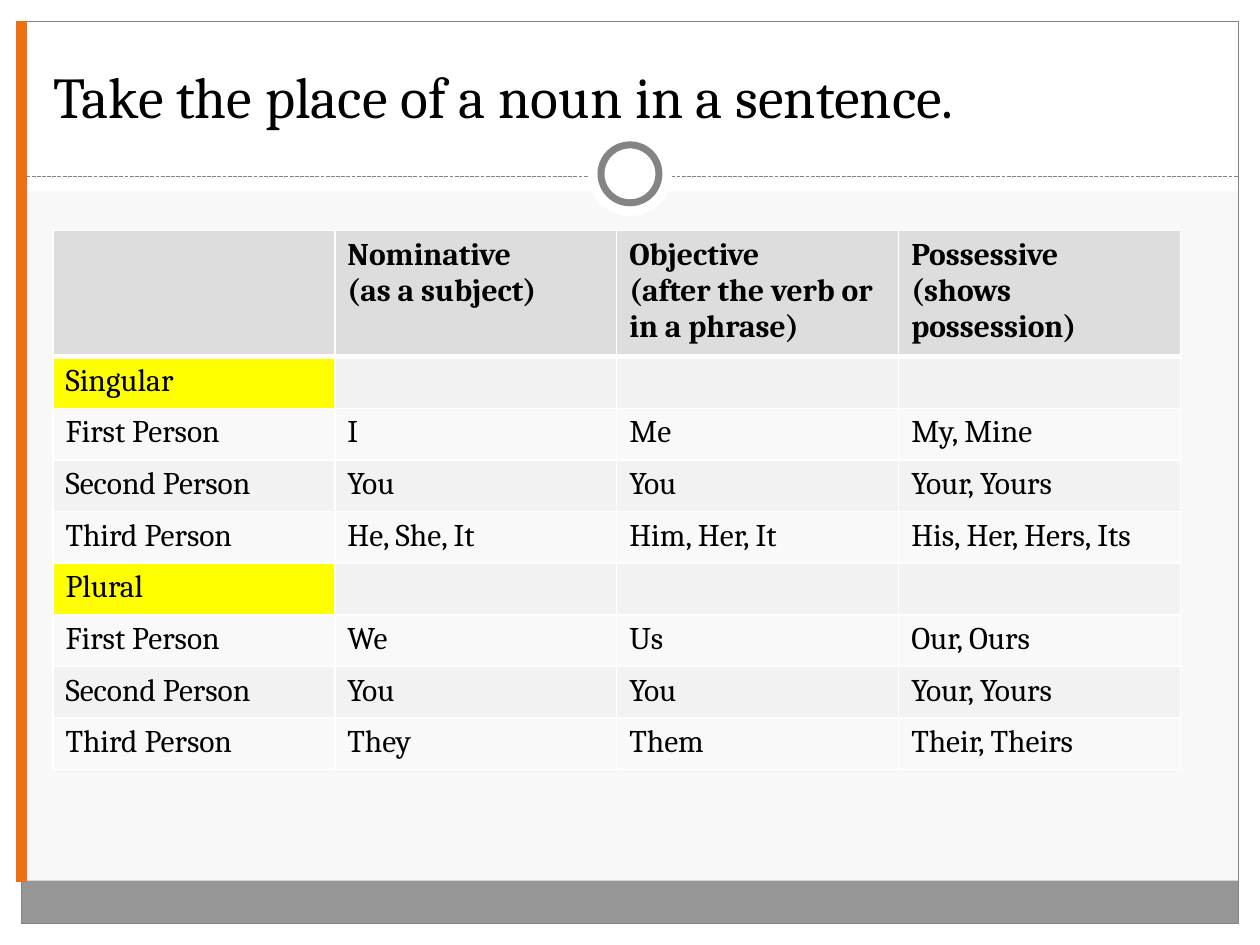
from lxml import etree
from pptx import Presentation
from pptx.dml.color import RGBColor
from pptx.enum.dml import MSO_LINE
from pptx.enum.shapes import MSO_CONNECTOR, MSO_SHAPE
from pptx.enum.text import MSO_ANCHOR
from pptx.oxml.ns import qn
from pptx.util import Inches, Pt

RECTANGLE, OVAL = MSO_SHAPE.RECTANGLE, MSO_SHAPE.OVAL
STRAIGHT = MSO_CONNECTOR.STRAIGHT
DASH = MSO_LINE.SQUARE_DOT
BOTTOM = MSO_ANCHOR.BOTTOM

FONT = "Cambria"
WHITE, BLACK, GRAY, ORANGE = "FFFFFF", "000000", "848484", "EE7012"
HEADER_FILL, GROUP_FILL, BAND_FILLS = "DDDDDD", "FFFF00", ("F9F9F9", "F2F2F2")

TITLE = "Take the place of a noun in a sentence."
PRONOUNS = [
    ("", "Nominative\n(as a subject)", "Objective\n(after the verb or in a phrase)",
     "Possessive\n(shows possession)"),
    ("Singular", "", "", ""),
    ("First Person", "I", "Me", "My, Mine"),
    ("Second Person", "You", "You", "Your, Yours"),
    ("Third Person", "He, She, It", "Him, Her, It", "His, Her, Hers, Its"),
    ("Plural", "", "", ""),
    ("First Person", "We", "Us", "Our, Ours"),
    ("Second Person", "You", "You", "Your, Yours"),
    ("Third Person", "They", "Them", "Their, Theirs"),
]

WIDTH, HEIGHT, MARGIN = 10, 7.5, 0.17
INNER_WIDTH, INNER_HEIGHT = WIDTH - 2 * MARGIN, HEIGHT - 2 * MARGIN
RULE_TOP, RING_CENTER = 1.4, 1.38
TABLE_LEFT, TABLE_TOP, TABLE_WIDTH = 0.42, 1.83, 8.95
HEADER_HEIGHT, ROW_HEIGHT = 0.95, 0.41


def color(value):
    return RGBColor.from_string(value)


def add_panel(page, kind, left, top, width, height, fill=None, line=None, weight=0.75):
    shape = page.shapes.add_shape(kind, *map(Inches, (left, top, width, height)))
    shape.shadow.inherit = False
    if fill:
        shape.fill.solid()
        shape.fill.fore_color.rgb = color(fill)
    else:
        shape.fill.background()
    if line:
        shape.line.color.rgb = color(line)
        shape.line.width = Pt(weight)
    else:
        shape.line.fill.background()


def add_disc(page, diameter, **style):
    add_panel(page, OVAL, (WIDTH - diameter) / 2, RING_CENTER - diameter / 2,
              diameter, diameter, WHITE, **style)


def add_rule(page, start, end, line, weight, dash=None):
    rule = page.shapes.add_connector(STRAIGHT, *map(Inches, start + end))
    rule.line.color.rgb = color(line)
    rule.line.width = Pt(weight)
    if dash:
        rule.line.dash_style = dash
    etree.SubElement(rule._element.spPr, qn("a:effectLst"))


def write(frame, text, size, bold=False):
    for index, content in enumerate(text.split("\n")):
        para = frame.add_paragraph() if index else frame.paragraphs[0]
        span = para.add_run()
        span.text = content
        span.font.name, span.font.size, span.font.bold = FONT, Pt(size), bold
        span.font.color.rgb = color(BLACK)


def set_borders(cell, bottom_weight):
    properties = cell._tc.get_or_add_tcPr()
    weights = {"a:lnL": 1, "a:lnR": 1, "a:lnT": 1, "a:lnB": bottom_weight}
    for position, (tag, weight) in enumerate(weights.items()):
        border = etree.Element(qn(tag), w=str(Pt(weight)))
        fill = etree.SubElement(border, qn("a:solidFill"))
        etree.SubElement(fill, qn("a:srgbClr"), val=WHITE)
        properties.insert(position, border)


def row_fill(row, column):
    if row == 0:
        return HEADER_FILL
    if column == 0 and not any(PRONOUNS[row][1:]):
        return GROUP_FILL
    return BAND_FILLS[row % 2]


def add_pronoun_table(page):
    rows, columns = len(PRONOUNS), len(PRONOUNS[0])
    height = HEADER_HEIGHT + (rows - 1) * ROW_HEIGHT
    table = page.shapes.add_table(
        rows, columns, *map(Inches, (TABLE_LEFT, TABLE_TOP, TABLE_WIDTH, height))).table
    for column in table.columns:
        column.width = Inches(TABLE_WIDTH / columns)
    for row, texts in enumerate(PRONOUNS):
        table.rows[row].height = Inches(ROW_HEIGHT if row else HEADER_HEIGHT)
        for column, text in enumerate(texts):
            cell = table.cell(row, column)
            cell.fill.solid()
            cell.fill.fore_color.rgb = color(row_fill(row, column))
            set_borders(cell, 1 if row else 3)
            if text:
                write(cell.text_frame, text, 18, bold=row == 0)


def main():
    deck = Presentation()
    deck.slide_width, deck.slide_height = Inches(WIDTH), Inches(HEIGHT)
    page = deck.slides.add_slide(deck.slide_layouts[6])
    page.background.fill.solid()
    page.background.fill.fore_color.rgb = color("F8F8F8")

    for area in [(0, HEIGHT - MARGIN, WIDTH, MARGIN), (0, 0, WIDTH, 1.52),
                 (0, 0, MARGIN, HEIGHT), (WIDTH - MARGIN, 0, MARGIN, HEIGHT)]:
        add_panel(page, RECTANGLE, *area, fill=WHITE)
    add_panel(page, RECTANGLE, MARGIN, 6.99, INNER_WIDTH, 0.34, fill="969696")
    add_panel(page, RECTANGLE, MARGIN, MARGIN, INNER_WIDTH, INNER_HEIGHT, line=GRAY)
    add_rule(page, (MARGIN, RULE_TOP), (WIDTH - MARGIN, RULE_TOP), GRAY, 0.75, DASH)
    add_disc(page, 0.67)
    add_disc(page, 0.46, line=GRAY, weight=4)

    box = page.shapes.add_textbox(*map(Inches, (0.33, 0.25, 9.33, 0.83)))
    box.text_frame.word_wrap = True
    box.text_frame.vertical_anchor = BOTTOM
    write(box.text_frame, TITLE, 33)

    add_pronoun_table(page)
    add_rule(page, (MARGIN, MARGIN), (MARGIN, 7), ORANGE, 6)
    deck.save("out.pptx")


if __name__ == "__main__":
    main()
